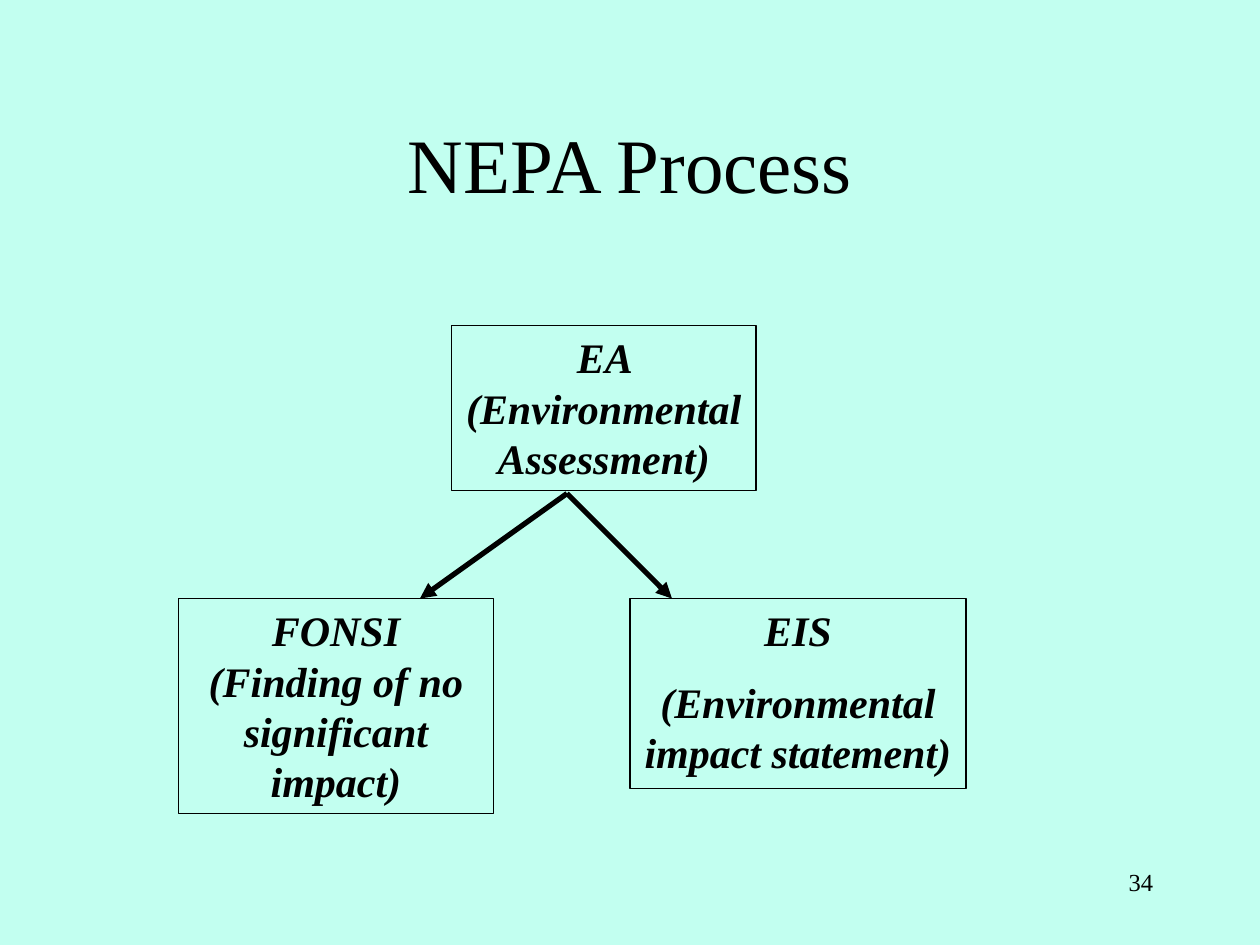
from lxml import etree
from pptx import Presentation
from pptx import util as u
from pptx.dml.color import RGBColor
from pptx.enum import shapes, text
from pptx.oxml.ns import qn

MINT = RGBColor(0xC2, 0xFF, 0xF0)
BLACK = RGBColor(0, 0, 0)
FONT = "Times New Roman"
WIDE, HIGH = 10, 7.5
COL, ROW = WIDE / 120, HIGH / 90  # grid cells of 1/12 inch


def grid(*cells):
    """Turn column, row pairs into lengths."""
    steps = (COL, ROW) * (len(cells) // 2)
    return [u.Inches(n * step) for n, step in zip(cells, steps)]


def write(frame, *lines, size=24, align=text.PP_ALIGN.CENTER,
          anchor=text.MSO_ANCHOR.TOP, bold=False, gap=0):
    frame.word_wrap = True
    frame.vertical_anchor = anchor
    for i, line in enumerate(lines):
        para = frame.paragraphs[0] if i == 0 else frame.add_paragraph()
        para.alignment = align
        para.space_before = u.Pt(gap)
        run = para.add_run()
        run.text = line
        font = run.font
        font.name, font.size = FONT, u.Pt(size)
        font.bold = font.italic = bold
        font.color.rgb = BLACK


def add_box(slide, cells, *lines):
    box = slide.shapes.add_shape(shapes.MSO_SHAPE.RECTANGLE, *grid(*cells))
    box.shadow.inherit = False
    box.fill.background()
    box.line.color.rgb = BLACK
    box.line.width = u.Pt(0.75)
    write(box.text_frame, *lines, bold=True, gap=12)


def add_arrow(slide, start, end):
    arrow = slide.shapes.add_connector(
        shapes.MSO_CONNECTOR.STRAIGHT, *grid(*start, *end))
    arrow.line.color.rgb = BLACK
    arrow.line.width = u.Pt(3)
    etree.SubElement(arrow.line._get_or_add_ln(), qn("a:tailEnd"), type="triangle")
    etree.SubElement(arrow._element.spPr, qn("a:effectLst"))


def main():
    deck = Presentation()
    deck.slide_width, deck.slide_height = u.Inches(WIDE), u.Inches(HIGH)
    slide = deck.slides.add_slide(deck.slide_layouts[5])
    slide.background.fill.solid()
    slide.background.fill.fore_color.rgb = MINT

    page = slide.shapes.add_textbox(*grid(86, 82, 25, 6))
    write(page.text_frame, "34", size=14, align=text.PP_ALIGN.RIGHT)

    title = slide.shapes.title
    title.left, title.top, title.width, title.height = grid(9, 8, 102, 15)
    write(title.text_frame, "NEPA Process", size=44,
          anchor=text.MSO_ANCHOR.MIDDLE)

    add_box(slide, (43, 31, 29, 15.7), "EA (Environmental Assessment)")
    for col in (40, 64):
        add_arrow(slide, (54, 47), (col, 57))
    add_box(slide, (17, 57, 30, 20.5),
            "FONSI (Finding of no significant impact)")
    add_box(slide, (60, 57, 32, 18.1),
            "EIS", "(Environmental impact statement)")

    deck.save("out.pptx")


if __name__ == "__main__":
    main()
